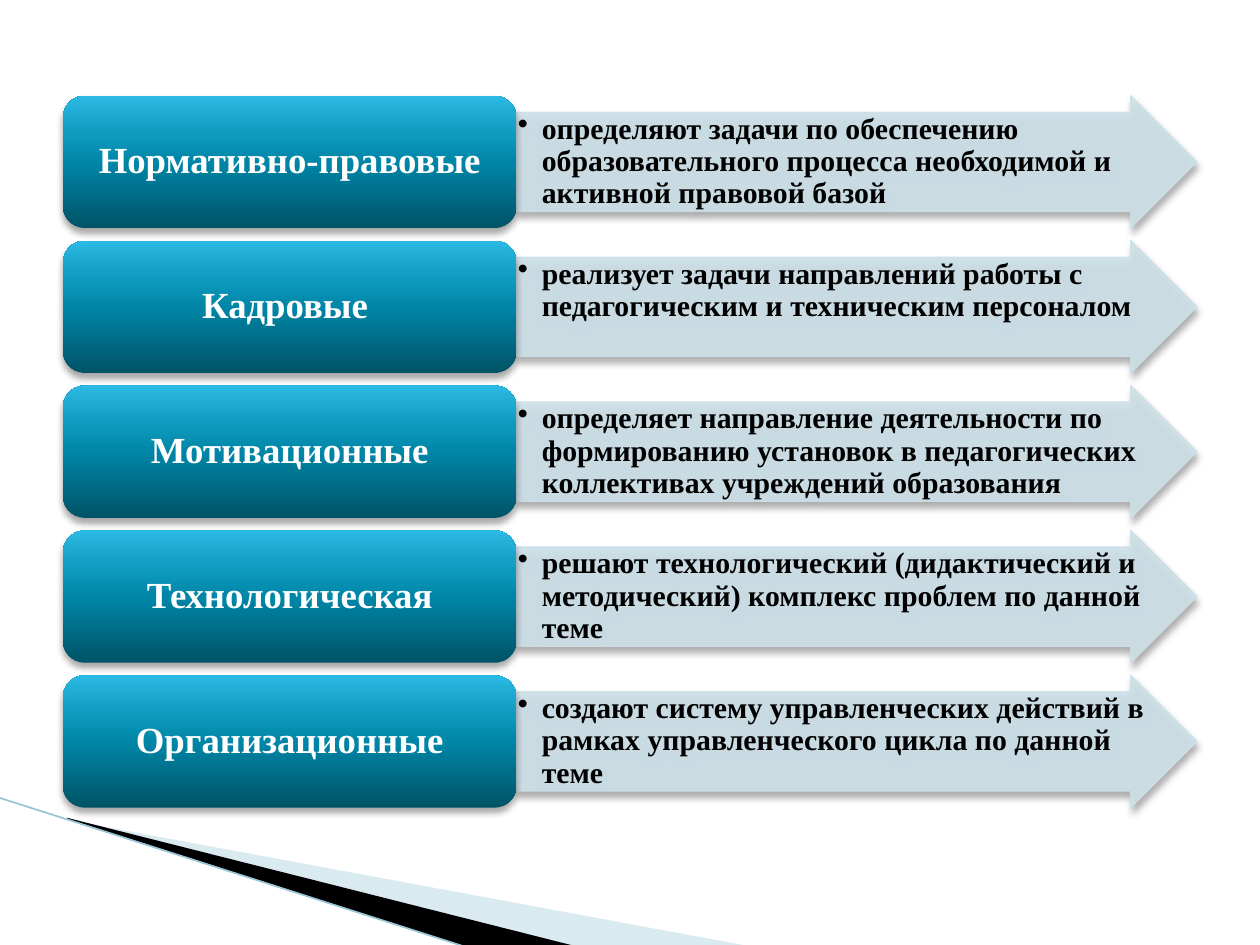
from typing import NamedTuple

from lxml import etree
from pptx import Presentation
from pptx.dml.color import RGBColor
from pptx.enum.shapes import MSO_CONNECTOR, MSO_SHAPE
from pptx.enum.text import MSO_ANCHOR, PP_ALIGN
from pptx.oxml.ns import qn
from pptx.util import Inches, Pt

ARROW, ROUNDED = MSO_SHAPE.RIGHT_ARROW, MSO_SHAPE.ROUNDED_RECTANGLE
STRAIGHT = MSO_CONNECTOR.STRAIGHT
TOP, MIDDLE = MSO_ANCHOR.TOP, MSO_ANCHOR.MIDDLE
LEFT, CENTER = PP_ALIGN.LEFT, PP_ALIGN.CENTER

COLORS = {
    "arrow": "CDE0E8",
    "pale_wedge": "A0CBDC",
    "edge": "97C5D8",
    "dark": "000000",
    "light": "FFFFFF",
}
LABEL_GRADIENT = [(0, "005367"), (50, "0086A7"), (70, "0E9ABE"), (100, "2CB9E3")]

FIRST_TOP, ROW_STEP, ROW_HEIGHT = 0.76, 1.15, 1.05
LABEL_LEFT, LABEL_WIDTH = 0.5, 3.6
ARROW_LEFT, ARROW_WIDTH = LABEL_LEFT + LABEL_WIDTH, 5.4
BULLET_INDENT = 0.19


class Condition(NamedTuple):
    label: str
    purpose: str


class Wedge(NamedTuple):
    points: list[tuple[float, float]]
    color: str
    opacity: int


class TextStyle(NamedTuple):
    size: int
    color: str
    align: PP_ALIGN
    anchor: MSO_ANCHOR
    margin_x: float
    margin_y: float


CONDITIONS = [
    Condition("Нормативно-правовые",
              "определяют задачи по обеспечению образовательного процесса "
              "необходимой и активной правовой базой"),
    Condition("Кадровые ",
              "реализует задачи направлений работы с педагогическим и "
              "техническим персоналом"),
    Condition("Мотивационные",
              "определяет направление деятельности по формированию установок "
              "в педагогических коллективах учреждений образования"),
    Condition("Технологическая",
              "решают технологический (дидактический и методический) комплекс "
              "проблем по данной теме"),
    Condition("Организационные",
              "создают систему управленческих действий в рамках "
              "управленческого цикла по данной теме"),
]
WEDGES = [
    Wedge([(0.55, 6.51), (5.95, 7.51), (4.56, 7.51), (0.55, 6.5)], "pale_wedge", 40),
    Wedge([(0.53, 6.49), (4.57, 7.51), (3.72, 7.52), (0.54, 6.5)], "dark", 100),
]
LABEL_STYLE = TextStyle(21, "light", CENTER, MIDDLE, 0.09, 0.04)
PURPOSE_STYLE = TextStyle(17, "dark", LEFT, TOP, 0.01, 0.01)


def rgb(name: str) -> RGBColor:
    return RGBColor.from_string(COLORS[name])


def set_opacity(container, percent: int) -> None:
    """Apply an opacity to every RGB colour inside an XML element."""
    for color in container.iter(qn("a:srgbClr")):
        etree.SubElement(color, qn("a:alpha"), val=str(percent * 1000))


def add_shadow(shape) -> None:
    shape.shadow.inherit = False
    effects = shape._element.spPr.find(qn("a:effectLst"))
    shadow = etree.SubElement(effects, qn("a:outerShdw"), blurRad=str(Pt(4)),
                              dist=str(Pt(3)), dir="5400000", rotWithShape="0")
    etree.SubElement(shadow, qn("a:srgbClr"), val=COLORS["dark"])
    set_opacity(shadow, 35)


def fill_label(shape) -> None:
    """Fill with the label gradient, running from bottom to top."""
    shape.fill.gradient()
    shape.fill.gradient_angle = 90
    stops = shape._element.spPr.find(".//" + qn("a:gsLst"))
    stops.clear()
    for position, color in LABEL_GRADIENT:
        stop = etree.SubElement(stops, qn("a:gs"), pos=str(position * 1000))
        etree.SubElement(stop, qn("a:srgbClr"), val=color)


def add_bullet(paragraph) -> None:
    paragraph.level = 1
    properties = paragraph._p.get_or_add_pPr()
    properties.set("marL", str(Inches(BULLET_INDENT)))
    properties.set("indent", str(-Inches(BULLET_INDENT)))
    etree.SubElement(properties, qn("a:buChar"), char="•")


def write_text(shape, text: str, style: TextStyle, bulleted: bool = False) -> None:
    frame = shape.text_frame
    margin_x, margin_y = Inches(style.margin_x), Inches(style.margin_y)
    frame_format = {
        "word_wrap": True, "vertical_anchor": style.anchor,
        "margin_left": margin_x, "margin_right": margin_x,
        "margin_top": margin_y, "margin_bottom": margin_y,
    }
    for name, value in frame_format.items():
        setattr(frame, name, value)
    paragraph = frame.paragraphs[0]
    if bulleted:
        add_bullet(paragraph)
    paragraph.alignment = style.align
    paragraph.line_spacing = 0.9
    run = paragraph.add_run()
    run.text = text
    font_format = {"name": "Times New Roman", "size": Pt(style.size), "bold": True}
    for name, value in font_format.items():
        setattr(run.font, name, value)
    run.font.color.rgb = rgb(style.color)


def add_wedge(slide, wedge: Wedge) -> None:
    start, *rest = [(Inches(x), Inches(y)) for x, y in wedge.points]
    builder = slide.shapes.build_freeform(*start)
    builder.add_line_segments(rest, close=True)
    shape = builder.convert_to_shape()
    shape.shadow.inherit = False
    shape.fill.solid()
    shape.fill.fore_color.rgb = rgb(wedge.color)
    shape.line.fill.background()
    if wedge.opacity < 100:
        set_opacity(shape._element.spPr, wedge.opacity)


def add_edge(slide) -> None:
    edge = slide.shapes.add_connector(
        STRAIGHT, Inches(-0.01), Inches(6.33), Inches(3.71), Inches(7.52))
    edge.line.color.rgb = rgb("edge")
    edge.line.width = Pt(0.95)
    etree.SubElement(edge._element.spPr, qn("a:effectLst"))


def add_condition(slide, condition: Condition, top: float) -> None:
    arrow = slide.shapes.add_shape(ARROW, Inches(ARROW_LEFT), Inches(top),
                                   Inches(ARROW_WIDTH), Inches(ROW_HEIGHT))
    arrow.adjustments[0], arrow.adjustments[1] = 0.75, 0.5
    arrow.fill.solid()
    arrow.fill.fore_color.rgb = rgb("arrow")
    arrow.line.color.rgb = rgb("arrow")
    arrow.line.width = Pt(0.75)
    set_opacity(arrow._element.spPr, 90)
    add_shadow(arrow)
    write_text(arrow, condition.purpose, PURPOSE_STYLE, bulleted=True)

    label = slide.shapes.add_shape(ROUNDED, Inches(LABEL_LEFT), Inches(top),
                                   Inches(LABEL_WIDTH), Inches(ROW_HEIGHT))
    fill_label(label)
    label.line.fill.background()
    add_shadow(label)
    write_text(label, condition.label, LABEL_STYLE)


def main() -> None:
    presentation = Presentation()
    presentation.slide_width, presentation.slide_height = Inches(10), Inches(7.5)
    slide = presentation.slides.add_slide(presentation.slide_layouts[6])
    for wedge in WEDGES:
        add_wedge(slide, wedge)
    add_edge(slide)
    for row, condition in enumerate(CONDITIONS):
        add_condition(slide, condition, FIRST_TOP + row * ROW_STEP)
    presentation.save("out.pptx")


if __name__ == "__main__":
    main()
